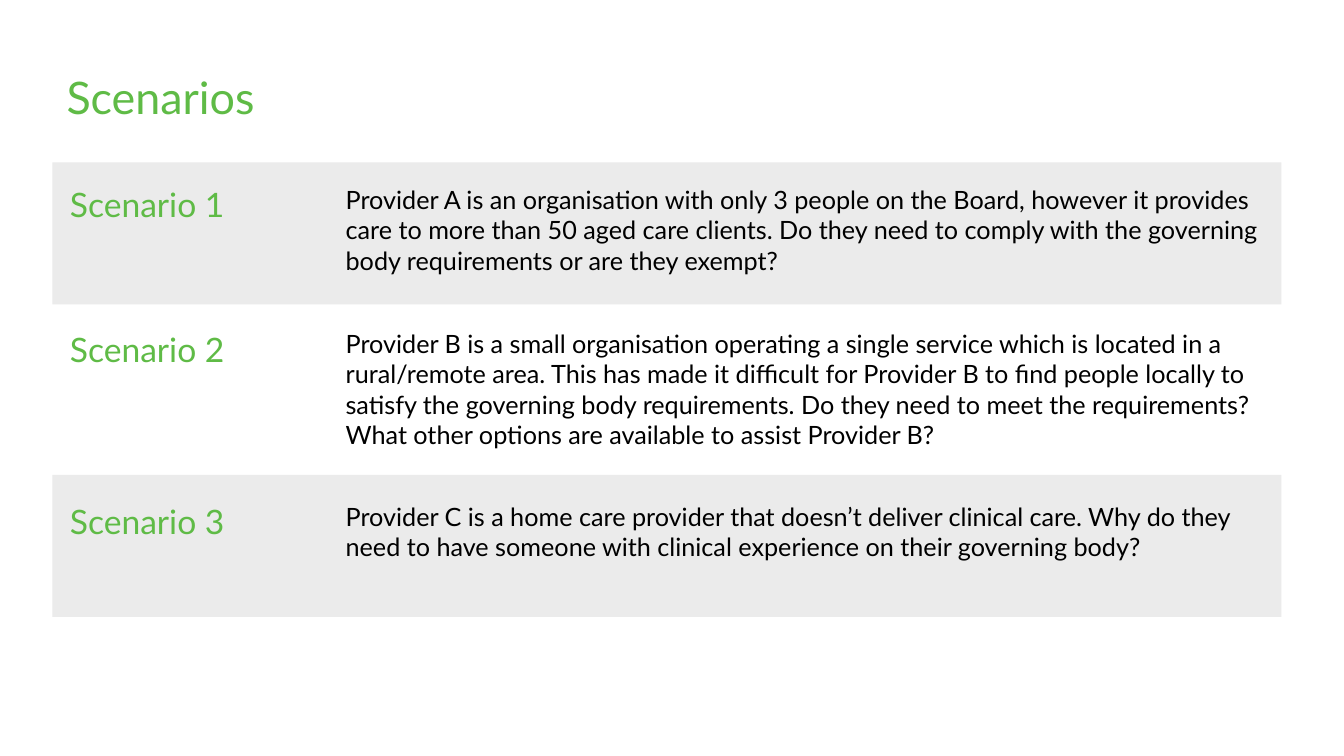
from pptx import Presentation
from pptx.dml.color import RGBColor
from pptx.enum.shapes import MSO_SHAPE
from pptx.enum.text import MSO_ANCHOR, PP_ALIGN
from pptx.util import Inches, Pt

# Content: label, question, banded row or not
TITLE = "Scenarios"
SCENARIOS = [
    ("Scenario 1",
     "Provider A is an organisation with only 3 people on the Board, however it "
     "provides care to more than 50 aged care clients. Do they need to comply with "
     "the governing body requirements or are they exempt?", True),
    ("Scenario 2",
     "Provider B is a small organisation operating a single service which is located "
     "in a rural/remote area. This has made it difficult for Provider B to find people "
     "locally to satisfy the governing body requirements. Do they need to meet the "
     "requirements? What other options are available to assist Provider B?", False),
    ("Scenario 3",
     "Provider C is a home care provider that doesn’t deliver clinical care. Why do "
     "they need to have someone with clinical experience on their governing body?", True),
]

# Grid in inches: columns are (left, width), rows are (top, height)
BAND_COLUMN, LABEL_COLUMN, QUESTION_COLUMN = (0.52, 12.19), (0.33, 2.26), (3.33, 9.3)
ROWS = [(1.61, 1.41), (3.02, 1.69), (4.71, 1.41)]
TEXT_INSETS = [0.17, 0.19, 0.21]
LABEL_HEIGHT = 0.5

GREEN, BLACK, GREY = "5FBB46", "000000", "EBEBEB"
TITLE_FORMAT = {"size": Pt(32), "name": "Lato", "color": GREEN}
LABEL_FORMAT = {"size": Pt(24), "name": "Lato", "color": GREEN}
QUESTION_FORMAT = {"size": Pt(18), "name": "Lato", "color": BLACK}


def color(hex_string):
    return RGBColor.from_string(hex_string)


def write(frame, text, formats, align):
    frame.word_wrap = True
    para = frame.paragraphs[0]
    para.alignment = align
    span = para.add_run()
    span.text = text
    for name, value in formats.items():
        if name == "color":
            span.font.color.rgb = color(value)
        else:
            setattr(span.font, name, value)
    return para


def add_text(page, column, top, height, text, formats, align=PP_ALIGN.LEFT):
    left, width = column
    box = page.shapes.add_textbox(*map(Inches, (left, top, width, height)))
    write(box.text_frame, text, formats, align)


def add_band(page, top, height):
    left, width = BAND_COLUMN
    band = page.shapes.add_shape(
        MSO_SHAPE.RECTANGLE, *map(Inches, (left, top, width, height)))
    band.shadow.inherit = False
    band.fill.solid()
    band.fill.fore_color.rgb = color(GREY)
    band.line.fill.background()


def main():
    deck = Presentation()
    deck.slide_width, deck.slide_height = Inches(13.33), Inches(7.5)
    page = deck.slides.add_slide(deck.slide_layouts[5])

    # Title
    title = page.shapes.title
    title.left, title.top, title.width, title.height = map(
        Inches, (0.56, 0.7, 10.16, 0.59))
    title.text_frame.vertical_anchor = MSO_ANCHOR.MIDDLE
    para = write(title.text_frame, TITLE, TITLE_FORMAT, PP_ALIGN.LEFT)
    para.line_spacing = 0.9

    # Scenario rows
    for (label, question, banded), (top, height), inset in zip(
            SCENARIOS, ROWS, TEXT_INSETS):
        if banded:
            add_band(page, top, height)
        text_top = top + inset
        add_text(page, LABEL_COLUMN, text_top, LABEL_HEIGHT, label,
                 LABEL_FORMAT, PP_ALIGN.CENTER)
        add_text(page, QUESTION_COLUMN, text_top, height - 2 * inset, question,
                 QUESTION_FORMAT)

    deck.save("out.pptx")


if __name__ == "__main__":
    main()
